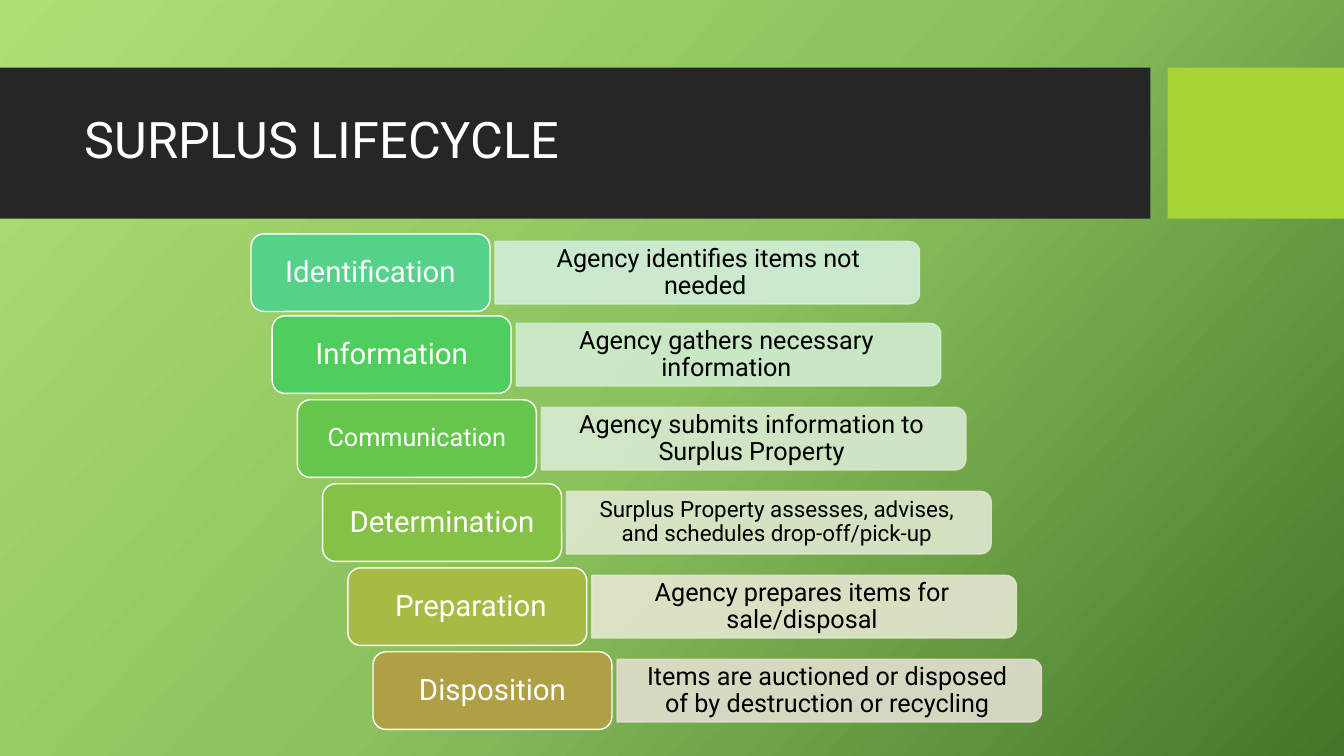
from copy import deepcopy

from lxml.etree import SubElement
from pptx import Presentation
from pptx.dml.color import RGBColor
from pptx.enum.shapes import MSO_SHAPE as Preset
from pptx.enum.text import MSO_ANCHOR as Anchor, PP_ALIGN as Align
from pptx.oxml.ns import qn
from pptx.util import Inches, Pt

WHITE = RGBColor(0xFF, 0xFF, 0xFF)
BLACK = RGBColor(0x00, 0x00, 0x00)
CHARCOAL = RGBColor(0x26, 0x26, 0x26)
LIME = RGBColor(0xA7, 0xD5, 0x35)
BACKDROP = [
    (0, RGBColor(0xAF, 0xDE, 0x77)),
    (0.5, RGBColor(0x8B, 0xC2, 0x5D)),
    (1, RGBColor(0x43, 0x75, 0x28)),
]
STAGES = [
    ("Identification", 21, RGBColor(0x54, 0xD2, 0x89),
     " Agency identifies items not needed", 18, RGBColor(0xD1, 0xEE, 0xDA)),
    ("Information", 21, RGBColor(0x4F, 0xCD, 0x5D),
     "Agency gathers necessary information", 18, RGBColor(0xD0, 0xEC, 0xD0)),
    ("Communication", 18, RGBColor(0x64, 0xC7, 0x4B),
     "Agency submits information to Surplus Property", 18, RGBColor(0xD8, 0xEA, 0xD0)),
    ("Determination", 21, RGBColor(0x86, 0xC1, 0x47),
     "Surplus Property assesses, advises, and schedules drop-off/pick-up", 16,
     RGBColor(0xDF, 0xE8, 0xCF)),
    (" Preparation", 21, RGBColor(0xA6, 0xBA, 0x44),
     "Agency prepares items for sale/disposal", 18, RGBColor(0xE5, 0xE6, 0xCF)),
    ("Disposition", 21, RGBColor(0xAF, 0xA0, 0x45),
     "Items are auctioned or disposed of by destruction or recycling", 18,
     RGBColor(0xE4, 0xDE, 0xCF)),
]
STAGE_WIDTH, STAGE_HEIGHT = 2.37, 0.77
BAR_WIDTH, BAR_HEIGHT = 4.21, 0.62


def apply_format(target, values):
    for name, value in values.items():
        setattr(target, name, value)


class SlideBuilder:
    font_name = "Roboto"
    line_spacing = 0.9

    def __init__(self, presentation):
        self.slide = presentation.slides.add_slide(presentation.slide_layouts[6])

    def background(self, stops, angle):
        fill = self.slide.background.fill
        fill.gradient()
        fill.gradient_angle = angle
        stop_list = next(self.slide.element.iter(qn("a:gsLst")))
        stop_list.insert(1, deepcopy(stop_list[0]))
        for stop, (position, color) in zip(fill.gradient_stops, stops):
            stop.position = position
            stop.color.rgb = color

    def shape(self, preset, box, color, line=None, opacity=None):
        shape = self.slide.shapes.add_shape(preset, *map(Inches, box))
        shape.shadow.inherit = False
        shape.fill.solid()
        shape.fill.fore_color.rgb = color
        if line is None:
            shape.line.fill.background()
        else:
            shape.line.color.rgb = line
            shape.line.width = Pt(1)
        if opacity is not None:
            for element in shape.element.spPr.iter(qn("a:srgbClr")):
                SubElement(element, qn("a:alpha"), val=str(opacity * 1000))
        return shape

    def label(self, shape, text, size, color, align=Align.CENTER, margins=(0.09, 0.04)):
        side, edge = map(Inches, margins)
        apply_format(shape.text_frame, {
            "word_wrap": True, "vertical_anchor": Anchor.MIDDLE,
            "margin_left": side, "margin_right": side,
            "margin_top": edge, "margin_bottom": edge,
        })
        paragraph = shape.text_frame.paragraphs[0]
        paragraph.text = text
        apply_format(paragraph, {"alignment": align, "line_spacing": self.line_spacing})
        apply_format(paragraph.font, {"name": self.font_name, "size": Pt(size)})
        paragraph.font.color.rgb = color

    def text(self, box, *content, **options):
        self.label(self.slide.shapes.add_textbox(*map(Inches, box)), *content, **options)

    def stage(self, left, top, name, name_size, color, detail, detail_size, tint):
        box = (left, top, STAGE_WIDTH, STAGE_HEIGHT)
        self.label(self.shape(Preset.ROUNDED_RECTANGLE, box, color, WHITE),
                   name, name_size, WHITE)
        bar_left = left + STAGE_WIDTH + 0.05
        middle = top + STAGE_HEIGHT / 2
        upright = (bar_left + (BAR_WIDTH - BAR_HEIGHT) / 2, middle - BAR_WIDTH / 2,
                   BAR_HEIGHT, BAR_WIDTH)
        bar = self.shape(Preset.ROUND_2_SAME_RECTANGLE, upright, tint, tint, opacity=90)
        bar.rotation = 90
        self.text((bar_left, middle - 0.28, 4.17, 0.56), detail, detail_size, BLACK,
                  margins=(0.27, 0.14))


def main():
    presentation = Presentation()
    apply_format(presentation, {"slide_width": Inches(13.33), "slide_height": Inches(7.5)})
    builder = SlideBuilder(presentation)
    builder.background(BACKDROP, 318)
    builder.shape(Preset.RECTANGLE, (0, 0.67, 11.41, 1.5), CHARCOAL)
    builder.shape(Preset.RECTANGLE, (11.58, 0.67, 1.75, 1.5), LIME)
    builder.text((0.74, 0.82, 10.51, 1.18), "SURPLUS LIFECYCLE", 36, WHITE,
                 align=Align.LEFT, margins=(0.1, 0.05))
    for index, stage in enumerate(STAGES):
        left = max(2.49, 2.45 + 0.25 * index)
        top = max(2.32, 2.3 + 2.5 / 3 * index)
        builder.stage(left, top, *stage)
    presentation.save("out.pptx")


if __name__ == "__main__":
    main()
